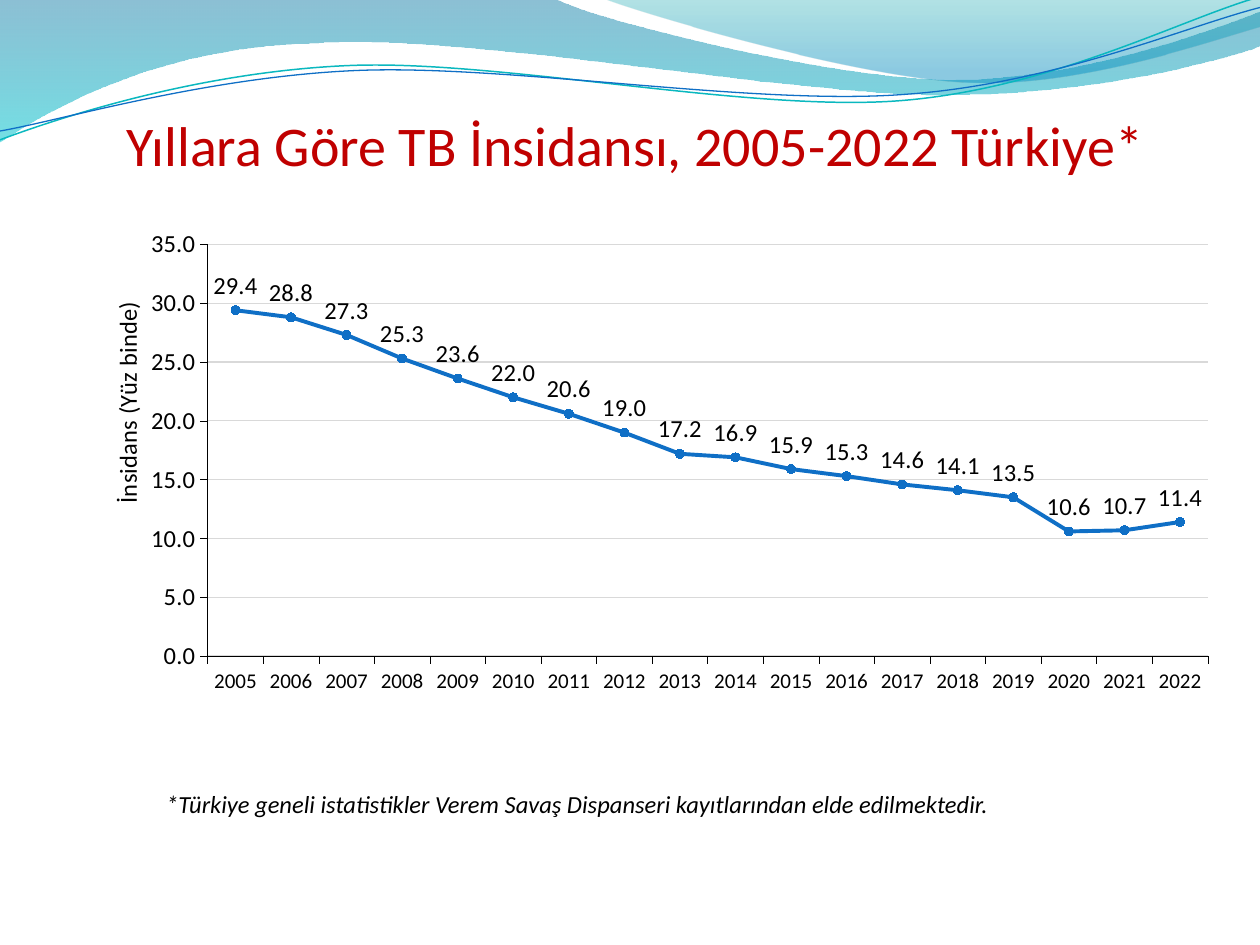
"""Builds a slide with a wave header and a line chart of TB incidence in Türkiye."""
import math

from lxml import etree
from pptx import Presentation
from pptx import util as u
from pptx.chart.data import CategoryChartData
from pptx.dml.color import RGBColor
from pptx.enum import chart as ch, text as t
from pptx.oxml import parse_xml
from pptx.oxml.ns import nsdecls, qn

BLACK = RGBColor(0, 0, 0)
RED = RGBColor(0xC0, 0, 0)
BLUE = RGBColor(0x0F, 0x6F, 0xC6)
TEAL = RGBColor(0x0A, 0xB8, 0xBF)
GRID = RGBColor(0xD9, 0xD9, 0xD9)
FONT = "Calibri"

TITLE = "Yıllara Göre TB İnsidansı, 2005-2022 Türkiye*"
NOTE = "*Türkiye geneli istatistikler Verem Savaş Dispanseri kayıtlarından elde edilmektedir."
AXIS_TITLE = "İnsidans (Yüz binde)"
YEARS = [str(y) for y in range(2005, 2023)]
RATES = [29.4, 28.8, 27.3, 25.3, 23.6, 22, 20.6, 19, 17.2, 16.9, 15.9, 15.3,
         14.6, 14.1, 13.5, 10.6, 10.7, 11.4]
PLOT = {"layoutTarget": "inner", "xMode": "edge", "yMode": "edge",
        "x": 0.1, "y": 0.025, "w": 0.884, "h": 0.736}
TITLE_SPOT = {"xMode": "edge", "yMode": "edge", "x": 0.01, "y": 0.12}

# Each step has one point for a line or three for a Bézier curve.
BANDS = [
    ([[(0, 0)], [(4.4, -0.01)], [(4.76, 0.17), (6.64, 0.63), (7.58, 0.63)],
      [(8.53, 0.63), (9.58, 0.26), (10, 0.09)], [(10.01, 0.36)],
      [(9.83, 0.44), (8.7, 0.76), (7.46, 0.75)],
      [(6.22, 0.75), (3.82, 0.28), (2.57, 0.34)],
      [(1.29, 0.36), (0.46, 0.83), (-0.01, 1.13)], [(0, 0)]],
     [(0, "0074A1", 45), (100, "00C6CF", 55)]),
    ([[(4.79, -0.01)], [(5.09, 0.11), (6.82, 0.62), (7.69, 0.65)],
      [(8.56, 0.69), (9.61, 0.32), (10, 0.21)], [(10, 0)], [(4.79, -0.01)]],
     [(0, "00A1A9", 30), (80, "008BBF", 45)]),
]
TILT = 357.3
STRANDS = [
    ([[(0, 1.11)], [(0.48, 0.93), (1.58, 0.57), (2.77, 0.52)],
      [(3.95, 0.47), (5.93, 0.89), (7.13, 0.8)],
      [(8.33, 0.71), (9.38, 0.15), (9.98, -0.02)]], (4.99, 0.58), TEAL, 0.85),
    ([[(0, 1.04)], [(0.47, 0.96), (1.64, 0.61), (2.83, 0.56)],
      [(4.03, 0.51), (5.97, 0.84), (7.17, 0.75)],
      [(8.36, 0.67), (9.41, 0.21), (10, 0.06)]], (5, 0.59), BLUE, 0.75),
]


def add_outline(shapes, steps, close):
    pts = [(u.Inches(x), u.Inches(y)) for step in steps for x, y in step]
    builder = shapes.build_freeform(*pts[0])
    builder.add_line_segments(pts[1:], close=close)
    sp = builder.convert_to_shape()
    sp.shadow.inherit = False
    sp.fill.background()
    lines = iter(list(sp.element.iter(qn("a:lnTo"))))
    for step in steps[1:]:
        parts = [next(lines) for _ in step]
        if len(parts) == 3:
            curve = etree.Element(qn("a:cubicBezTo"))
            parts[0].addprevious(curve)
            for part in parts:
                curve.append(part[0])
                part.getparent().remove(part)
    return sp


def add_band(shapes, steps, stops):
    sp = add_outline(shapes, steps, True)
    sp.line.fill.background()
    gs = "".join(
        f'<a:gs pos="{pos * 1000}"><a:srgbClr val="{color}">'
        f'<a:alpha val="{alpha * 1000}"/></a:srgbClr></a:gs>'
        for pos, color, alpha in stops)
    grad = parse_xml(f'<a:gradFill {nsdecls("a")}><a:gsLst>{gs}</a:gsLst>'
                     '<a:lin ang="5400000" scaled="0"/></a:gradFill>')
    pr = sp.element.spPr
    pr.replace(pr.find(qn("a:noFill")), grad)


def add_strand(shapes, steps, center, color, width):
    cx, cy = center
    c, d = math.cos(math.radians(-TILT)), math.sin(math.radians(-TILT))
    level = [[(cx + (x - cx) * c - (y - cy) * d, cy + (x - cx) * d + (y - cy) * c)
              for x, y in step] for step in steps]
    sp = add_outline(shapes, level, False)
    sp.rotation = TILT
    set_line(sp.line, color, width)


def set_line(line, color, width):
    line.color.rgb = color
    line.width = u.Pt(width)


def set_font(font, size, color=BLACK, **extra):
    for key, value in {"name": FONT, "size": u.Pt(size), "bold": False, **extra}.items():
        setattr(font, key, value)
    font.color.rgb = color


def add_text(s, words, box, frame, para, font):
    tf = s.shapes.add_textbox(*map(u.Inches, box)).text_frame
    p = tf.paragraphs[0]
    for obj, values in ((tf, frame), (p, para)):
        for key, value in values.items():
            setattr(obj, key, value)
    r = p.add_run()
    r.text = words
    set_font(r.font, **font)


def place(parent, values, index):
    for old in parent.findall(qn("c:layout")):
        parent.remove(old)
    layout = etree.Element(qn("c:layout"))
    manual = etree.SubElement(layout, qn("c:manualLayout"))
    for key, value in values.items():
        etree.SubElement(manual, qn(f"c:{key}")).set("val", str(value))
    parent.insert(index, layout)


def add_rates(s):
    data = CategoryChartData(number_format="0.0")
    data.categories = YEARS
    data.add_series("Series 1", RATES)
    box = map(u.Inches, (0.75, 1.82, 8.98, 4.45))
    chart = s.shapes.add_chart(ch.XL_CHART_TYPE.LINE_MARKERS, *box, data).chart
    chart.has_legend = chart.has_title = False
    set_font(chart.font, 14)
    place(chart.element.find(".//" + qn("c:plotArea")), PLOT, 0)

    cat, val = chart.category_axis, chart.value_axis
    for axis, size in ((cat, 12), (val, 14)):
        axis.major_tick_mark = ch.XL_TICK_MARK.OUTSIDE
        axis.minor_tick_mark = ch.XL_TICK_MARK.NONE
        set_font(axis.tick_labels.font, size)
        set_line(axis.format.line, BLACK, 0.25)
    cat.has_major_gridlines = False
    val.minimum_scale, val.maximum_scale, val.major_unit = 0, 35, 5
    val.tick_labels.number_format = "0.0"
    val.tick_labels.number_format_is_linked = False
    set_line(val.major_gridlines.format.line, GRID, 0.75)
    r = val.axis_title.text_frame.paragraphs[0].add_run()
    r.text = AXIS_TITLE
    set_font(r.font, 14)
    place(val.axis_title._element, TITLE_SPOT, 1)

    plot = chart.plots[0]
    plot.vary_by_categories = False
    series = plot.series[0]
    series.smooth = False
    set_line(series.format.line, BLUE, 2.25)
    marker = series.marker
    marker.style, marker.size = ch.XL_MARKER_STYLE.CIRCLE, 5
    marker.format.fill.solid()
    marker.format.fill.fore_color.rgb = BLUE
    marker.format.line.color.rgb = BLUE
    labels = series.data_labels
    for key, value in {"show_value": True, "position": ch.XL_LABEL_POSITION.ABOVE,
                       "number_format": "0.0", "number_format_is_linked": False}.items():
        setattr(labels, key, value)
    set_font(labels.font, 14)


def main():
    prs = Presentation()
    prs.slide_width, prs.slide_height = u.Inches(10), u.Inches(7.5)
    s = prs.slides.add_slide(prs.slide_layouts[6])
    for band in BANDS:
        add_band(s.shapes, *band)
    group = s.shapes.add_group_shape()
    for strand in STRANDS:
        add_strand(group.shapes, *strand)
    add_text(s, TITLE, (0.51, 0.78, 9.07, 0.63),
             {"word_wrap": True, "vertical_anchor": t.MSO_ANCHOR.BOTTOM, "margin_left": 0,
              "margin_right": 0, "margin_top": u.Inches(0.05), "margin_bottom": 0},
             {"alignment": t.PP_ALIGN.CENTER}, {"size": 32, "color": RED})
    add_text(s, NOTE, (1.22, 6.18, 6.79, 0.36),
             {"word_wrap": False, "auto_size": t.MSO_AUTO_SIZE.SHAPE_TO_FIT_TEXT},
             {"alignment": t.PP_ALIGN.JUSTIFY, "line_spacing": 1.15},
             {"size": 14, "italic": True})
    add_rates(s)
    prs.save("out.pptx")


if __name__ == "__main__":
    main()
